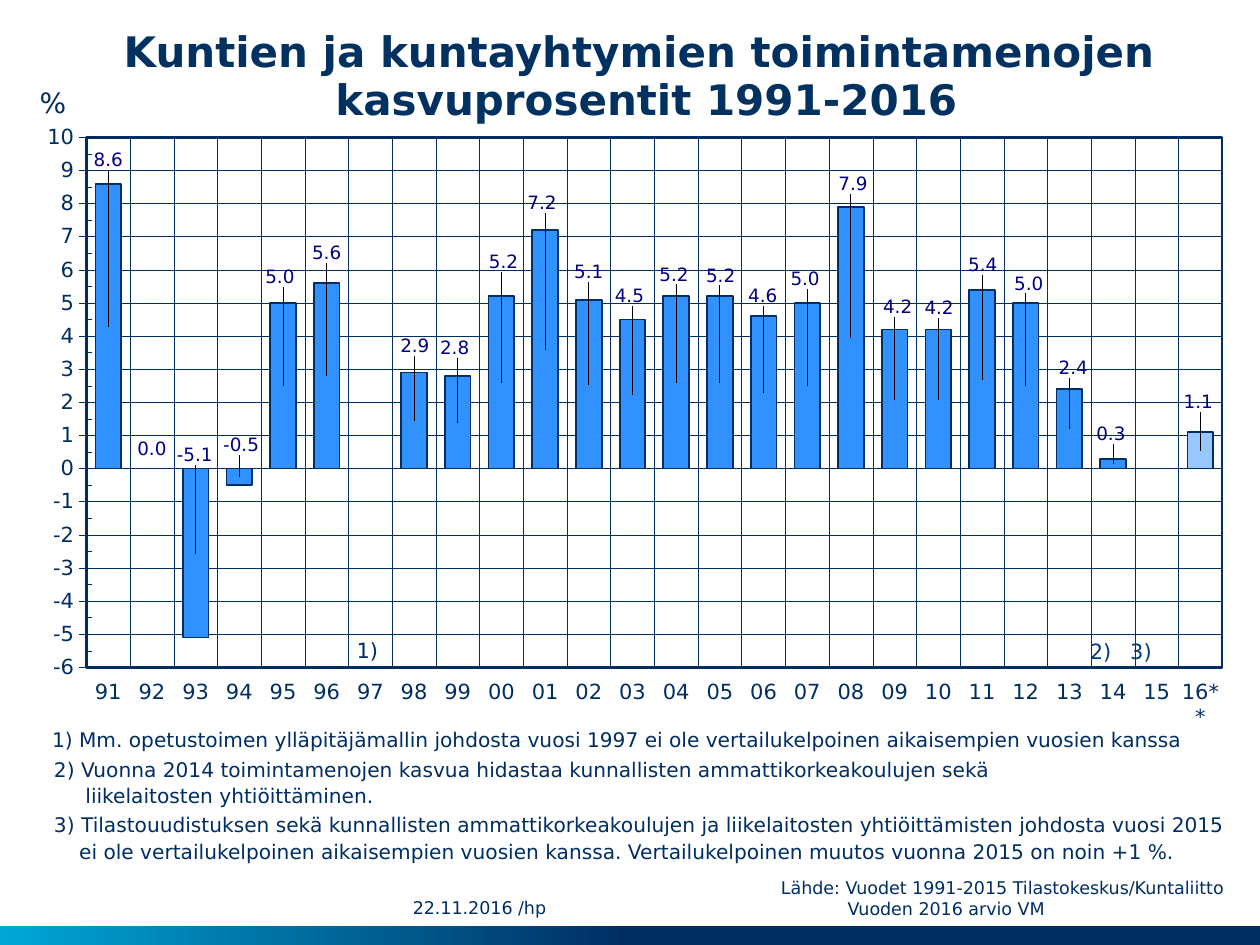
from lxml import etree
from pptx import Presentation
from pptx.chart.data import CategoryChartData
from pptx.dml.color import RGBColor
from pptx.enum.chart import XL_CHART_TYPE, XL_LABEL_POSITION, XL_TICK_LABEL_POSITION, XL_TICK_MARK
from pptx.enum.dml import MSO_LINE
from pptx.enum.shapes import MSO_SHAPE
from pptx.enum.text import MSO_ANCHOR, PP_ALIGN
from pptx.oxml import parse_xml
from pptx.oxml.ns import nsdecls, qn
from pptx.util import Inches, Pt

STACKED = XL_CHART_TYPE.COLUMN_STACKED
CENTRE_LABEL = XL_LABEL_POSITION.CENTER
LOW = XL_TICK_LABEL_POSITION.LOW
OUT, IN = XL_TICK_MARK.OUTSIDE, XL_TICK_MARK.INSIDE
DOTTED = MSO_LINE.ROUND_DOT
RECT = MSO_SHAPE.RECTANGLE
TOP, MIDDLE, BOTTOM = MSO_ANCHOR.TOP, MSO_ANCHOR.MIDDLE, MSO_ANCHOR.BOTTOM
LEFT, CENTER = PP_ALIGN.LEFT, PP_ALIGN.CENTER

COLORS = {"navy": "002E63", "title": "003161", "mark": "003882", "label": "000080",
          "cyan": "00A6D6", "bar": "3191FF", "estimate": "98C8FF"}
FONT = "DejaVu Sans"
COLS, ROWS = 100, 75

# Year, growth in per cent, label height on the value axis, label shift in column widths
GROWTH = [
    ("91", 8.6, 9.33, 0), ("92", 0, 0.6, 0), ("93", -5.1, 0.42, -0.02),
    ("94", -0.5, 0.72, 0.04), ("95", 5, 5.8, -0.07), ("96", 5.6, 6.52, 0),
    ("97", None, 0, 0), ("98", 2.9, 3.71, 0.02), ("99", 2.8, 3.65, -0.07),
    ("00", 5.2, 6.25, 0.05), ("01", 7.2, 8.03, -0.07), ("02", 5.1, 5.95, 0),
    ("03", 4.5, 5.22, -0.07), ("04", 5.2, 5.86, -0.05), ("05", 5.2, 5.83, 0.02),
    ("06", 4.6, 5.22, -0.02), ("07", 5, 5.74, -0.05), ("08", 7.9, 8.6, 0.05),
    ("09", 4.2, 4.89, 0.07), ("10", 4.2, 4.86, 0.02), ("11", 5.4, 6.16, 0.02),
    ("12", 5, 5.59, 0.07), ("13", 2.4, 3.05, 0.09), ("14", 0.3, 1.06, -0.05),
    ("15", None, 0, 0), ("16**", 1.1, 2.02, -0.05),
]
LOWEST, HIGHEST = -6, 10
PLOT = {"x": 0.043, "y": 0.021, "w": 0.954, "h": 0.88}


def rgb(name):
    return RGBColor.from_string(COLORS[name])


def assign(target, values):
    for name, value in values.items():
        setattr(target, name, value)


def manual_layout(parts):
    """Return a c:layout element from (tag, value) pairs."""
    inner = "".join(f'<c:{tag} val="{value}"/>' for tag, value in parts)
    return parse_xml(f'<c:layout {nsdecls("c")}><c:manualLayout>{inner}'
                     '</c:manualLayout></c:layout>')


class Sheet:
    def __init__(self):
        self.prs = Presentation()
        assign(self.prs, {"slide_width": Inches(10), "slide_height": Inches(7.5)})
        self.s = self.prs.slides.add_slide(self.prs.slide_layouts[6])

    def box(self, col, row, cols, rows):
        width, height = self.prs.slide_width, self.prs.slide_height
        return (int(col * width / COLS), int(row * height / ROWS),
                int(cols * width / COLS), int(rows * height / ROWS))

    def font(self, font, size, color="navy", bold=False):
        assign(font, {"name": FONT, "size": Pt(size), "bold": bold})
        font.color.rgb = rgb(color)

    def line(self, line, width, dash=None):
        line.color.rgb = rgb("navy")
        assign(line, {"width": Pt(width), "dash_style": dash})

    def text(self, at, lines, size, color="navy", bold=False, align=CENTER, anchor=TOP,
             wrap=True, inset=True, spacing=None, indents=(0, 0)):
        tf = self.s.shapes.add_textbox(*self.box(*at)).text_frame
        assign(tf, {"word_wrap": wrap, "vertical_anchor": anchor})
        if not inset:
            assign(tf, dict.fromkeys(
                ("margin_left", "margin_top", "margin_right", "margin_bottom"), 0))
        for i, (words, indent) in enumerate(zip(lines, indents)):
            p = tf.add_paragraph() if i else tf.paragraphs[0]
            assign(p, {"alignment": align, "line_spacing": spacing})
            if indent:
                p._p.get_or_add_pPr().set("marL", str(Inches(indent)))
            r = p.add_run()
            r.text = words
            self.font(r.font, size, color, bold)

    def gradient_band(self, at, start, end):
        sp = self.s.shapes.add_shape(RECT, *self.box(*at))
        sp.shadow.inherit = False
        sp.line.fill.background()
        sp.fill.gradient()
        sp.fill.gradient_angle = 180
        for stop, (color, position) in zip(sp.fill.gradient_stops, (start, end)):
            stop.color.rgb = rgb(color)
            stop.position = position

    def axis(self, axis, values):
        assign(axis, {"major_tick_mark": OUT, "has_major_gridlines": True, **values})
        self.font(axis.tick_labels.font, 12)
        self.line(axis.format.line, 0.25)
        self.line(axis.major_gridlines.format.line, 0.25, DOTTED)

    def point_label(self, point, value, height, shift):
        """Move a label from the middle of its bar to a height on the value axis."""
        label = point.data_label
        self.font(label.font, 10.5, "label")
        label.position = CENTRE_LABEL
        dx = shift * PLOT["w"] / len(GROWTH)
        dy = (value / 2 - height) * PLOT["h"] / (HIGHEST - LOWEST)
        idx = label._dLbl.find(qn("c:idx"))
        number = etree.Element(qn("c:numFmt"), formatCode="0.0", sourceLinked="0")
        idx.addnext(number)
        idx.addnext(manual_layout([("x", round(dx, 4)), ("y", round(dy, 4))]))

    def growth_chart(self, at):
        data = CategoryChartData(number_format="0.0")
        data.categories = [year for year, *_ in GROWTH]
        data.add_series("Series 1", [value for _, value, *_ in GROWTH])
        chart = self.s.shapes.add_chart(STACKED, *self.box(*at), data).chart
        assign(chart, {"has_title": False, "has_legend": False})
        self.font(chart.font, 12)
        self.axis(chart.category_axis, {"tick_label_position": LOW})
        self.axis(chart.value_axis, {
            "minimum_scale": LOWEST, "maximum_scale": HIGHEST, "major_unit": 1,
            "minor_unit": 0.5, "minor_tick_mark": IN})
        chart.value_axis.tick_labels.number_format = "0"
        chart.value_axis.tick_labels.number_format_is_linked = False

        plot = chart.plots[0]
        assign(plot, {"gap_width": 70, "overlap": 100, "vary_by_categories": False})
        series = plot.series[0]
        series.invert_if_negative = False
        series.format.fill.solid()
        series.format.fill.fore_color.rgb = rgb("bar")
        self.line(series.format.line, 1)
        assign(series.data_labels, {"show_value": True, "number_format": "0.0",
                                    "number_format_is_linked": False})
        self.font(series.data_labels.font, 10.5, "label")
        for i, (_, value, height, shift) in enumerate(GROWTH):
            if value is not None:
                self.point_label(series.points[i], value, height, shift)
        estimate = series.points[len(GROWTH) - 1].format
        estimate.fill.solid()
        estimate.fill.fore_color.rgb = rgb("estimate")
        self.line(estimate.line, 1)

        area = chart._chartSpace.chart.plotArea
        for old in area.findall(qn("c:layout")):
            area.remove(old)
        area.insert(0, manual_layout([("layoutTarget", "inner"), ("xMode", "edge"),
                                      ("yMode", "edge"), *PLOT.items()]))
        area.append(parse_xml(
            f'<c:spPr {nsdecls("c", "a")}><a:noFill/><a:ln w="{Pt(1.25)}"><a:solidFill>'
            f'<a:srgbClr val="{COLORS["navy"]}"/></a:solidFill></a:ln></c:spPr>'))


def main():
    sheet = Sheet()
    sheet.gradient_band((0, 73.5, 100, 1.5), ("navy", 0.5), ("cyan", 1))
    sheet.text((6.7, 2.3, 89.2, 7.7),
               ["Kuntien ja kuntayhtymien toimintamenojen ", "kasvuprosentit 1991-2016"],
               24, "title", bold=True, inset=False, spacing=0.95)
    sheet.growth_chart((2.8, 9.9, 94.5, 48))
    sheet.text((2, 6.3, 4.4, 3.7), ["%"], 16, wrap=False)
    for mark, col, row, color in (("1)", 27.2, 50.1, "navy"), ("2)", 85.4, 50.2, "mark"),
                                  ("3)", 88.6, 50.2, "mark")):
        sheet.text((col, row, 3.9, 3), [mark], 12, color, wrap=False)

    sheet.text((0.5, 57.2, 96.9, 3),
               ["1) Mm. opetustoimen ylläpitäjämallin johdosta vuosi 1997 ei ole "
                "vertailukelpoinen aikaisempien vuosien kanssa"], 11.5)
    note = {"size": 11.5, "align": LEFT, "anchor": BOTTOM, "spacing": 1.1}
    sheet.text((2.8, 59.5, 96.1, 5.1),
               ["2) Vuonna 2014 toimintamenojen kasvua hidastaa kunnallisten "
                "ammattikorkeakoulujen sekä",
                "liikelaitosten yhtiöittäminen."], indents=(0.05, 0.3), **note)
    sheet.text((2.8, 63.9, 97.2, 5.1),
               ["3) Tilastouudistuksen sekä kunnallisten ammattikorkeakoulujen ja "
                "liikelaitosten yhtiöittämisten johdosta vuosi 2015",
                "ei ole vertailukelpoinen aikaisempien vuosien kanssa. "
                "Vertailukelpoinen muutos vuonna 2015 on noin +1 %."],
               indents=(0.05, 0.25), **note)
    sheet.text((61, 69.1, 38.6, 4.4),
               ["Lähde: Vuodet 1991-2015 Tilastokeskus/Kuntaliitto", "Vuoden 2016 arvio VM"],
               10, align=LEFT, wrap=False, indents=(0, 0.53))
    sheet.text((30.1, 70.6, 15.9, 2.9), ["22.11.2016 /hp"], 10, anchor=MIDDLE, inset=False)
    sheet.prs.save("out.pptx")


if __name__ == "__main__":
    main()
